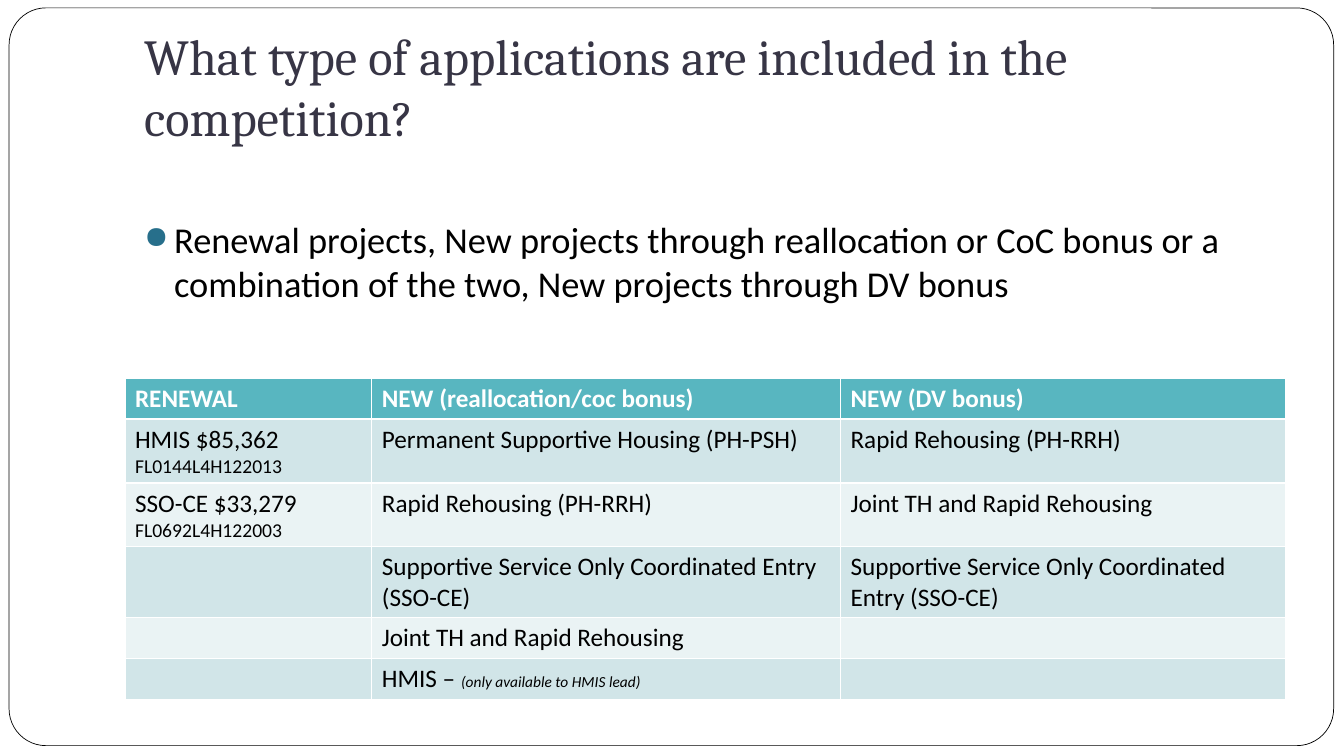
from lxml.etree import SubElement
from pptx import Presentation
from pptx.dml.color import RGBColor
from pptx.enum.shapes import MSO_SHAPE
from pptx.enum.text import MSO_ANCHOR, MSO_AUTO_SIZE, PP_ALIGN
from pptx.oxml.ns import qn
from pptx.util import Cm, Pt

COLORS = {
    "title": "373545",
    "text": "000000",
    "white": "FFFFFF",
    "bullet": "276F8B",
    "header": "58B6C0",
    "band_dark": "D1E5E8",
    "band_light": "EAF3F4",
}
COLUMN_WIDTHS = [6.22, 11.81, 11.23]
ROW_HEIGHT = 1.03
HEADERS = ["RENEWAL", "NEW (reallocation/coc bonus)", "NEW (DV bonus)"]
SSO_CE = "Supportive Service Only Coordinated Entry (SSO-CE)"
APPLICATIONS = [
    [
        [[("HMIS $85,362", {})], [("FL0144L4H122013", {"size": 14})]],
        "Permanent Supportive Housing (PH-PSH)",
        "Rapid Rehousing (PH-RRH)",
    ],
    [
        [[("SSO-CE $33,279", {})], [("FL0692L4H122003", {"size": 14})]],
        "Rapid Rehousing (PH-RRH)",
        "Joint TH and Rapid Rehousing",
    ],
    ["", SSO_CE, SSO_CE],
    ["", "Joint TH and Rapid Rehousing", ""],
    ["", [[("HMIS – ", {}), ("(only available to HMIS lead)", {"size": 11, "italic": True})]], ""],
]


def rgb(name):
    """Return the named colour."""
    return RGBColor.from_string(COLORS[name])


def add_text(p, text, size=18, font="Calibri", color="text", bold=False, italic=False):
    """Add a formatted run to a paragraph."""
    r = p.add_run()
    r.text = text
    r.font.size = Pt(size)
    r.font.name = font
    r.font.bold = bold
    r.font.italic = italic
    r.font.color.rgb = rgb(color)


def set_bullet(p, char, color, percent, indent):
    """Give a paragraph a coloured bullet with a hanging indent."""
    pPr = p._p.get_or_add_pPr()
    pPr.set("marL", str(indent))
    pPr.set("indent", str(-indent))
    buClr = SubElement(pPr, qn("a:buClr"))
    SubElement(buClr, qn("a:srgbClr"), val=COLORS[color])
    SubElement(pPr, qn("a:buSzPct"), val=str(percent * 1000))
    SubElement(pPr, qn("a:buChar"), char=char)


def add_frame(s):
    """Draw the rounded outline behind the title."""
    sp = s.shapes.add_shape(MSO_SHAPE.ROUNDED_RECTANGLE, Cm(0.23), Cm(0.2), Cm(33.38), Cm(18.59))
    sp.adjustments[0] = 0.05
    sp.shadow.inherit = False
    sp.fill.solid()
    sp.fill.fore_color.rgb = rgb("white")
    sp.line.color.rgb = rgb("text")
    sp.line.width = Pt(0.5)
    s.shapes.title.element.addprevious(sp.element)


def set_title(s, text):
    """Place and fill the title placeholder."""
    sp = s.shapes.title
    sp.left, sp.top, sp.width, sp.height = Cm(3.38), Cm(0.76), Cm(28.78), Cm(3.18)
    tf = sp.text_frame
    tf.auto_size = MSO_AUTO_SIZE.NONE
    tf.vertical_anchor = MSO_ANCHOR.BOTTOM
    tf.margin_bottom = Cm(0.25)
    p = tf.paragraphs[0]
    p.alignment = PP_ALIGN.LEFT
    add_text(p, text, size=36, font="Cambria", color="title")


def add_bullet_text(s, text):
    """Add the bulleted statement above the table."""
    sp = s.shapes.add_textbox(Cm(3.38), Cm(4.01), Cm(28.78), Cm(12.7))
    tf = sp.text_frame
    tf.word_wrap = True
    tf.margin_top = Cm(1.47)
    p = tf.paragraphs[0]
    set_bullet(p, "●", "bullet", 85, Cm(0.76))
    add_text(p, text, size=26)


def fill_cell(cell, content, fill, **fmt):
    """Fill a cell with plain text or with paragraphs of formatted runs."""
    cell.fill.solid()
    cell.fill.fore_color.rgb = rgb(fill)
    if not content:
        return
    paragraphs = [[(content, {})]] if isinstance(content, str) else content
    tf = cell.text_frame
    for i, runs in enumerate(paragraphs):
        p = tf.add_paragraph() if i else tf.paragraphs[0]
        for text, run_fmt in runs:
            add_text(p, text, **{**fmt, **run_fmt})


def add_applications_table(s):
    """Add the table of application types."""
    rows = [HEADERS] + APPLICATIONS
    table = s.shapes.add_table(
        len(rows), len(HEADERS), Cm(3.15), Cm(9.53),
        Cm(sum(COLUMN_WIDTHS)), Cm(ROW_HEIGHT * len(rows)),
    ).table
    for column, width in zip(table.columns, COLUMN_WIDTHS):
        column.width = Cm(width)
    for i, row in enumerate(rows):
        table.rows[i].height = Cm(ROW_HEIGHT)
        for j, content in enumerate(row):
            if i == 0:
                fill_cell(table.cell(i, j), content, "header", color="white", bold=True)
            else:
                fill_cell(table.cell(i, j), content, "band_dark" if i % 2 else "band_light")


def main():
    """Build and save the slide."""
    prs = Presentation()
    prs.slide_width, prs.slide_height = Cm(33.87), Cm(19.05)
    s = prs.slides.add_slide(prs.slide_layouts[5])
    add_frame(s)
    set_title(s, "What type of applications are included in the competition?")
    add_bullet_text(
        s,
        "Renewal projects, New projects through reallocation or CoC bonus or a "
        "combination of the two, New projects through DV bonus",
    )
    add_applications_table(s)
    prs.save("out.pptx")


if __name__ == "__main__":
    main()
